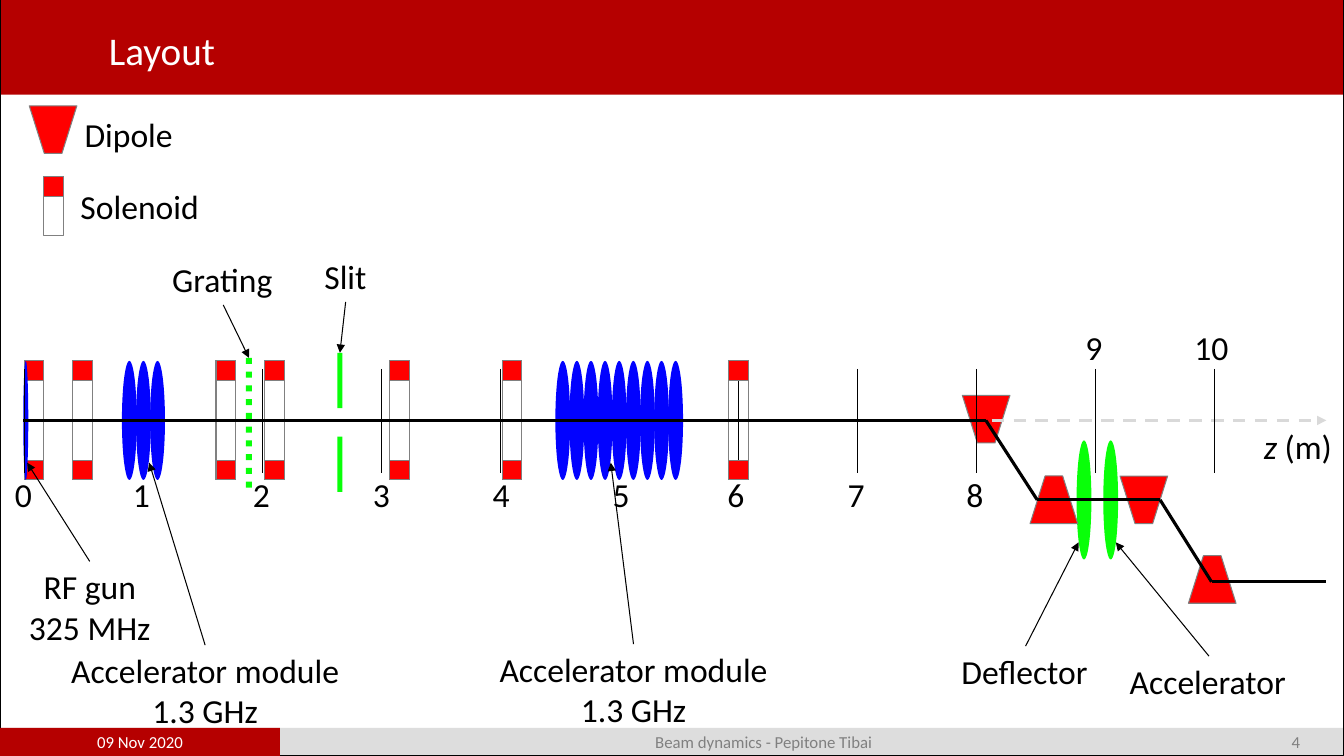
import lxml.etree
import pptx
import pptx.dml.color
import pptx.enum.dml
import pptx.enum.shapes
import pptx.enum.text
import pptx.oxml.ns
import pptx.util

Pt = pptx.util.Pt
SHAPES = pptx.enum.shapes.MSO_SHAPE
ALIGN = pptx.enum.text.PP_ALIGN
MIDDLE = pptx.enum.text.MSO_ANCHOR.MIDDLE
FIT = pptx.enum.text.MSO_AUTO_SIZE.SHAPE_TO_FIT_TEXT
NONE = pptx.enum.text.MSO_AUTO_SIZE.NONE

BRAND, BAND = "B50000", "DDDDDD"
RED, BLUE, GREEN = "FF0000", "0202FF", "09FF09"
BLACK, WHITE, GRAY, PALE = "000000", "FFFFFF", "808080", "D9D9D9"


def color(value):
    return pptx.dml.color.RGBColor.from_string(value)


def assign(target, values):
    for name, value in values.items():
        setattr(target, name, value)


class BeamlinePage:
    """Draws the elements of a beamline layout on one slide."""

    top, height, width, axis = 257.8, 85, 14.2, 300.3
    magnet = 34

    def __init__(self, deck):
        self.page = deck.slides.add_slide(deck.slide_layouts[5])

    def shape(self, kind, left, top, width, height, fill=None, line=None, parent=None):
        shapes = (parent or self.page).shapes
        item = shapes.add_shape(kind, Pt(left), Pt(top), Pt(width), Pt(height))
        item.shadow.inherit = False
        if fill:
            item.fill.solid()
            item.fill.fore_color.rgb = color(fill)
        else:
            item.fill.background()
        if line:
            item.line.color.rgb = color(line)
            item.line.width = Pt(0.75)
        else:
            item.line.fill.background()
        return item

    def rectangle(self, *place, **look):
        return self.shape(SHAPES.RECTANGLE, *place, **look)

    def add_span(self, para, text, size, ink, italic=False):
        span = para.add_run()
        span.text = text
        assign(span.font, {"name": "Calibri", "size": Pt(size), "italic": italic})
        span.font.color.rgb = color(ink)

    def title(self, text, left, top, width, height):
        box = self.page.shapes.title
        box.element.getparent().append(box.element)
        assign(box, {"left": Pt(left), "top": Pt(top), "width": Pt(width), "height": Pt(height)})
        assign(box.text_frame, {"vertical_anchor": MIDDLE, "word_wrap": True, "auto_size": NONE,
                                "margin_left": Pt(7.2), "margin_right": Pt(7.2),
                                "margin_top": Pt(3.6), "margin_bottom": Pt(0)})
        para = box.text_frame.paragraphs[0]
        para.alignment = ALIGN.LEFT
        self.add_span(para, text, 28, WHITE)

    def footer(self, text, left, width, ink):
        box = self.page.shapes.add_textbox(Pt(left), Pt(520), Pt(width), Pt(20))
        assign(box.text_frame, {"word_wrap": True, "vertical_anchor": MIDDLE})
        para = box.text_frame.paragraphs[0]
        para.alignment = ALIGN.CENTER
        self.add_span(para, text, 12, ink)

    def label(self, lines, left, top, width, symbol=None):
        box = self.page.shapes.add_textbox(
            Pt(left), Pt(top), Pt(width), Pt(7.2 + 29.2 * len(lines)))
        frame = box.text_frame
        assign(frame, {"word_wrap": False, "auto_size": FIT})
        for index, text in enumerate(lines):
            para = frame.add_paragraph() if index else frame.paragraphs[0]
            para.alignment = ALIGN.CENTER if len(lines) > 1 else ALIGN.LEFT
            if symbol:
                self.add_span(para, symbol, 24, BLACK, italic=True)
            self.add_span(para, text, 24, BLACK)
        return box

    def line(self, start, end, weight=0.75, ink=BLACK, dashed=False, arrow=False):
        straight = pptx.enum.shapes.MSO_CONNECTOR.STRAIGHT
        item = self.page.shapes.add_connector(straight, *map(Pt, start + end))
        item.line.color.rgb = color(ink)
        item.line.width = Pt(weight)
        if dashed:
            item.line.dash_style = pptx.enum.dml.MSO_LINE.DASH
        qn = pptx.oxml.ns.qn
        if arrow:
            lxml.etree.SubElement(item.get_or_add_ln(), qn("a:tailEnd"), type="triangle")
        lxml.etree.SubElement(item.element.spPr, qn("a:effectLst"))
        return item

    def pointer(self, box, side, start, end, target=None):
        arrow = self.line(start, end, arrow=True)
        arrow.begin_connect(box, side)
        if target:
            arrow.end_connect(target, 0)

    def tick(self, metre):
        across = 17.2 + 85.05 * metre
        self.line((across, 263.5), (across, 337.7))

    def dipole(self, left, top, inverted=False):
        item = self.shape(SHAPES.TRAPEZOID, left, top, self.magnet, self.magnet,
                          fill=RED, line=GRAY)
        item.adjustments[0] = 0.315
        item.rotation = 180 if inverted else 0

    def solenoid(self, left, top, height, caps):
        group = self.page.shapes.add_group_shape()
        self.rectangle(left, top, self.width, height, line=GRAY, parent=group)
        for cap in range(caps):
            self.rectangle(left, top + cap * (height - self.width), self.width, self.width,
                           fill=RED, line=GRAY, parent=group)

    def cavities(self, left, count, pitch=10.08, top=257.8, width=10.6, fill=BLUE):
        for cell in range(count):
            self.shape(SHAPES.OVAL, left + cell * pitch, top, width, self.height, fill=fill)


def main():
    deck = pptx.Presentation()
    assign(deck, {"slide_width": Pt(960), "slide_height": Pt(540)})
    page = BeamlinePage(deck)

    page.rectangle(0, 520, 960, 20, fill=BAND)
    page.rectangle(0, 0, 960, 67.6, fill=BRAND)
    page.rectangle(0, 0, 960, 540, line=BLACK)
    page.rectangle(0, 520, 200, 20, fill=BRAND)
    page.title("Layout", 70.6, 0, 768, 67.6)
    for text, left, width, ink in (("09 Nov 2020", 0, 200, WHITE),
                                   ("Beam dynamics - Pepitone Tibai", 200, 691.2, GRAY),
                                   ("4", 891.4, 68.6, GRAY)):
        page.footer(text, left, width, ink)

    page.dipole(687.4, 282.4, inverted=True)
    page.line((692.6, page.axis), (947.5, page.axis), 2.25, PALE, dashed=True, arrow=True)
    for metre in range(1, 11):
        page.tick(metre)
    lefts = (3.6, 87.8, 173.5, 259.2, 344.9, 430.6, 512.6, 598.3, 683.3, 768.2, 846)
    for metre, left in enumerate(lefts):
        page.label([str(metre)], left, 334.8 if metre < 9 else 229.7,
                   26.6 if metre < 10 else 38.9)
    page.label([" (m)"], 895.7, 301, 63.4, symbol="z")

    page.cavities(396.7, 9)
    page.cavities(87.1, 3)
    for left in (17.2, 51.8, 154.3, 188.8, 278, 358.6, 520.6):
        page.solenoid(left, page.top, page.height, caps=2)
    page.cavities(16.6, 1, width=3.6)

    page.dipole(848.9, 396.9)
    page.dipole(800, 340, inverted=True)
    page.cavities(769, 2, pitch=19.1, top=314.6, fill=GREEN)
    page.dipole(735.8, 340)
    bend = ((16.6, page.axis), (704.2, page.axis), (740.9, 357.1),
            (828.7, 357.1), (865.4, 415.6), (947.5, 415.6))
    for start, end in zip(bend, bend[1:]):
        page.line(start, end, 2.25)

    slit, _ = [page.rectangle(241, top, 3.6, 39.6, fill=GREEN) for top in (252, 311.8)]
    grating = [page.rectangle(175.7, 255.6 + 9.83 * bar, 4.3, 4.3, fill=GREEN)
               for bar in range(10)]
    page.tick(0)

    module = ["Accelerator module", "1.3 GHz"]
    for lines, left, top, width, end in (
            (["RF gun", "325 MHz"], 13, 401, 102.2, (19.4, 330.5)),
            (module, 42.5, 460.8, 208.1, (106.6, 330.5)),
            (module, 348.5, 460.1, 208.1, (436.3, 330.5)),
            (["Deflector"], 679.7, 461.5, 105.8, (770.4, 387.4)),
            (["Accelerator"], 799.9, 468.7, 127.4, (797, 387.4))):
        box = page.label(lines, left, top, width)
        page.pointer(box, 0, (left + width / 2, top), end)
    for text, left, top, width, target in (("Grating", 115.9, 181.4, 87.1, grating[0]),
                                           ("Slit", 224.6, 179.3, 44.6, slit)):
        box = page.label([text], left, top, width)
        page.pointer(box, 2, (left + width / 2, top + 36.4), (left, page.top), target)

    page.dipole(20.9, 75.6, inverted=True)
    page.solenoid(31, 126, 42.5, caps=1)
    page.label(["Solenoid"], 50.4, 129.6, 100.1)
    page.label(["Dipole"], 53.3, 77.8, 78.5)
    deck.save("out.pptx")


if __name__ == "__main__":
    main()
